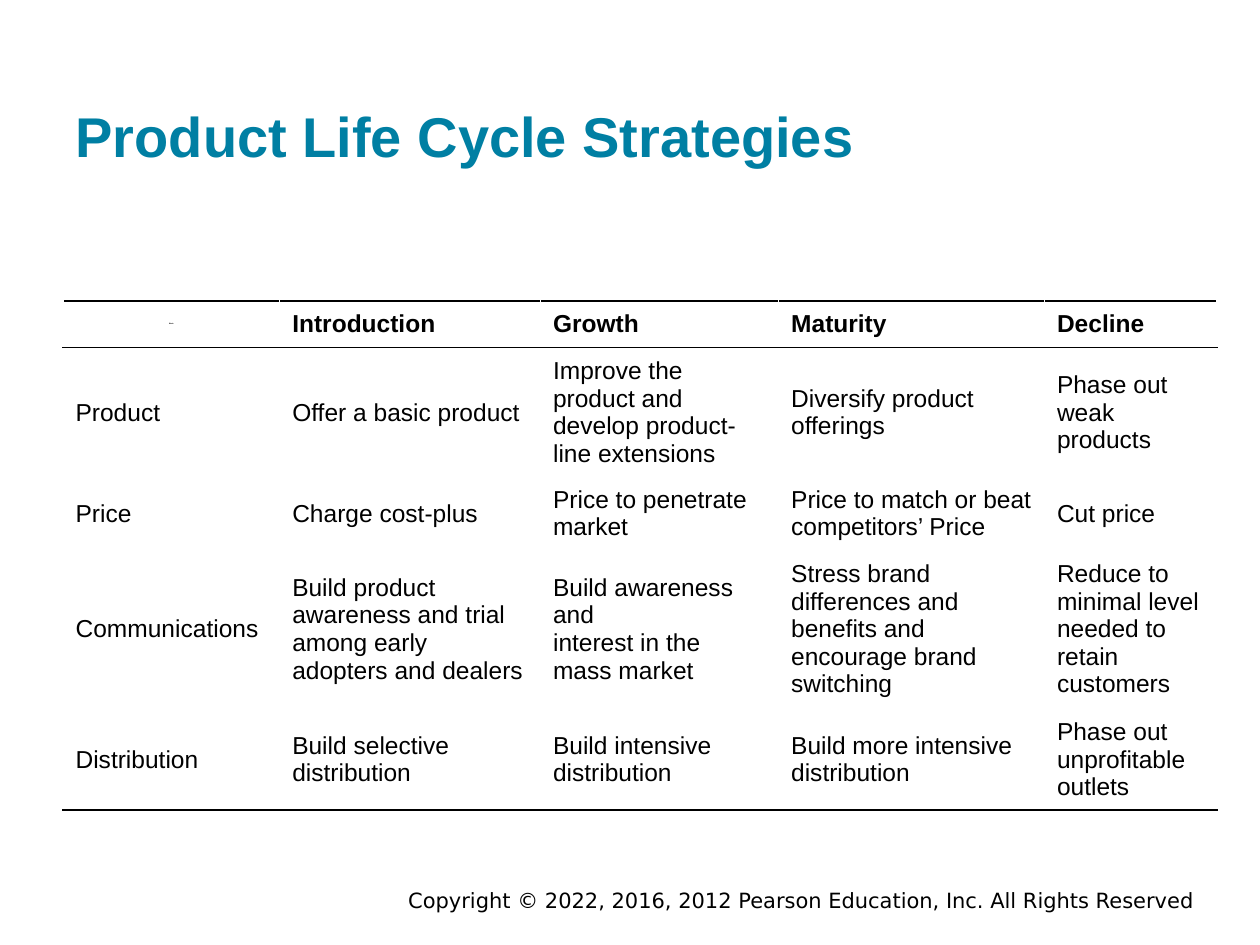
"""Builds the slide on marketing strategies over the product life cycle."""
import dataclasses

import lxml.etree
import pptx
import pptx.dml.color
import pptx.enum.text
import pptx.oxml.ns
import pptx.util

Pt = pptx.util.Pt
RGB = pptx.dml.color.RGBColor
Align = pptx.enum.text.PP_ALIGN
Anchor = pptx.enum.text.MSO_ANCHOR


@dataclasses.dataclass(frozen=True)
class Theme:
    """Colours, fonts and type sizes of the slide."""
    accent: str = "007FA3"
    ink: str = "000000"
    paper: str = "FFFFFF"
    font: str = "Arial"
    footer_font: str = "DejaVu Sans"
    title_size: int = 32
    table_size: int = 14
    footer_size: int = 12
    hidden_size: int = 1
    rule_width: int = 1


THEME = Theme()
COLUMN_WIDTHS = (123.84, 149.04, 136.08, 151.92, 98.64)
ROW_HEIGHTS = (26.6, 70, 38.6, 85.8, 54.4)
STRATEGIES = (
    ("Blank", "Introduction", "Growth", "Maturity", "Decline"),
    ("Product", "Offer a basic product",
     "Improve the product and develop product-line extensions",
     "Diversify product offerings", "Phase out weak products"),
    ("Price", "Charge cost-plus", "Price to penetrate market",
     "Price to match or beat competitors’ Price", "Cut price"),
    ("Communications",
     "Build product awareness and trial among early adopters and dealers",
     "Build awareness and\ninterest in the mass market",
     "Stress brand differences and benefits and encourage brand switching",
     "Reduce to minimal level\nneeded to retain customers"),
    ("Distribution", "Build selective distribution",
     "Build intensive distribution", "Build more intensive\ndistribution",
     "Phase out unprofitable\noutlets"),
)


def write(frame, text, size, color=THEME.ink, font=THEME.font, bold=False, align=Align.LEFT):
    """Fill a text frame with one paragraph for each line of text."""
    frame.word_wrap = True
    for index, line in enumerate(text.split("\n")):
        paragraph = frame.paragraphs[0] if index == 0 else frame.add_paragraph()
        paragraph.alignment = align
        run = paragraph.add_run()
        run.text = line
        run.font.name = font
        run.font.size = Pt(size)
        run.font.bold = bold
        run.font.color.rgb = RGB.from_string(color)


def add_title(slide, text):
    """Place and format the title placeholder."""
    title = slide.shapes.title
    title.left, title.top, title.width, title.height = Pt(36), Pt(17.28), Pt(648), Pt(86.4)
    frame = title.text_frame
    frame.auto_size = pptx.enum.text.MSO_AUTO_SIZE.NONE
    frame.vertical_anchor = Anchor.BOTTOM
    frame.margin_left = frame.margin_right = Pt(7.2)
    frame.margin_top = frame.margin_bottom = Pt(7.2)
    write(frame, text, THEME.title_size, THEME.accent, bold=True)


def add_footer(slide, text):
    """Add the right-aligned copyright line."""
    footer = slide.shapes.add_textbox(Pt(126), Pt(506.16), Pt(563.76), Pt(15.84))
    footer.text_frame.vertical_anchor = Anchor.MIDDLE
    write(footer.text_frame, text, THEME.footer_size, font=THEME.footer_font, align=Align.RIGHT)


def rule_cell(cell, sides):
    """Draw rules on the given sides of a cell, in schema order."""
    qn = pptx.oxml.ns.qn
    properties = cell._tc.get_or_add_tcPr()
    for index, side in enumerate(sides):
        rule = lxml.etree.Element(qn(f"a:ln{side}"), w=str(Pt(THEME.rule_width)))
        fill = lxml.etree.SubElement(rule, qn("a:solidFill"))
        lxml.etree.SubElement(fill, qn("a:srgbClr"), val=THEME.ink)
        properties.insert(index, rule)


def add_strategy_table(slide):
    """Add the table of strategies by life cycle stage."""
    table = slide.shapes.add_table(
        len(STRATEGIES), len(COLUMN_WIDTHS), Pt(36), Pt(172),
        Pt(sum(COLUMN_WIDTHS)), Pt(sum(ROW_HEIGHTS))).table
    table.first_row = table.horz_banding = False
    for column, width in zip(table.columns, COLUMN_WIDTHS):
        column.width = Pt(width)
    rules = {0: "TB", 1: "T", len(STRATEGIES) - 1: "B"}
    for row_index, (row, height) in enumerate(zip(table.rows, ROW_HEIGHTS)):
        row.height = Pt(height)
        for column_index, cell in enumerate(row.cells):
            corner = row_index == column_index == 0
            cell.vertical_anchor = Anchor.MIDDLE
            cell.fill.solid()
            cell.fill.fore_color.rgb = RGB.from_string(THEME.paper)
            rule_cell(cell, rules.get(row_index, ""))
            write(cell.text_frame, STRATEGIES[row_index][column_index],
                  THEME.hidden_size if corner else THEME.table_size,
                  bold=row_index == 0, align=Align.CENTER if corner else Align.LEFT)


def main():
    """Build and save the presentation."""
    presentation = pptx.Presentation()
    presentation.slide_width, presentation.slide_height = Pt(720), Pt(540)
    slide = presentation.slides.add_slide(presentation.slide_layouts[5])
    add_footer(slide, "Copyright © 2022, 2016, 2012 Pearson Education, Inc. All Rights Reserved")
    add_title(slide, "Product Life Cycle Strategies")
    add_strategy_table(slide)
    presentation.save("out.pptx")


if __name__ == "__main__":
    main()
